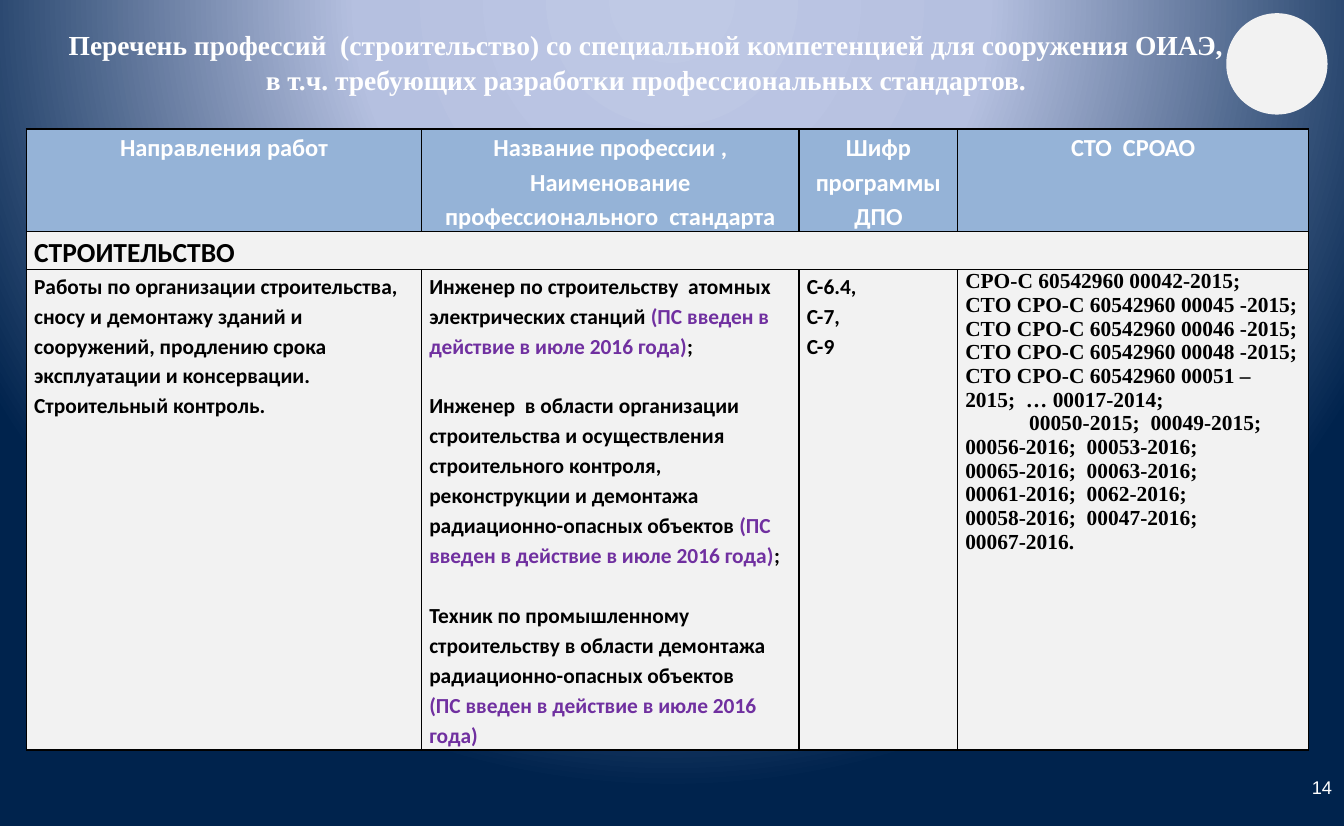
from pptx import Presentation
from pptx.dml.color import RGBColor
from pptx.enum.shapes import MSO_SHAPE
from pptx.enum.text import MSO_ANCHOR, PP_ALIGN
from pptx.oxml import parse_xml
from pptx.oxml.ns import nsdecls, qn
from pptx.util import Inches, Pt

WHITE = RGBColor(0xFF, 0xFF, 0xFF)
BLACK = RGBColor(0x00, 0x00, 0x00)
PURPLE = RGBColor(0x70, 0x30, 0xA0)
HEADER_BLUE = RGBColor(0x95, 0xB3, 0xD7)
LIGHT_GRAY = RGBColor(0xF2, 0xF2, 0xF2)
BACKGROUND_STOPS = [
    (0, RGBColor(0xBF, 0xC9, 0xE5)),
    (40, RGBColor(0xB5, 0xC0, 0xE0)),
    (100, RGBColor(0x00, 0x23, 0x4D)),
]

COLUMN_WIDTHS = [3.59, 3.43, 1.44, 3.19]
ROW_HEIGHTS = [0.93, 0.35, 4.36]
BLANK_LINE = 19.6
STANDARD_INDENT = 0.58

TITLE = ("Перечень профессий  (строительство) со специальной компетенцией для сооружения ОИАЭ,"
         "\vв т.ч. требующих разработки профессиональных стандартов.")
HEADERS = [
    ["Направления работ"],
    ["Название профессии ,", "Наименование профессионального  стандарта"],
    ["Шифр программы ДПО"],
    ["СТО  СРОАО"],
]
WORKS = [
    "Работы по организации строительства, сносу и демонтажу зданий и сооружений, "
    "продлению срока эксплуатации и консервации.",
    "Строительный контроль.",
]
IN_FORCE = "(ПС введен в действие в июле 2016 года)"
ENGINEERS = [
    "Инженер по строительству  атомных электрических станций ",
    "Инженер  в области организации строительства и осуществления строительного контроля, "
    "реконструкции и демонтажа  радиационно-опасных объектов ",
]
TECHNICIAN = ("Техник по промышленному строительству в области демонтажа "
              "радиационно-опасных объектов")
CODES = ["С-6.4,", "С-7,", "С-9"]
STANDARDS = [
    "СРО-С 60542960 00042-2015;",
    "СТО СРО-С 60542960 00045 -2015;",
    "СТО СРО-С 60542960 00046 -2015;",
    "СТО СРО-С 60542960 00048 -2015;",
    "СТО СРО-С 60542960 00051 – 2015;  … 00017-2014;",
]
INDENTED_STANDARDS = "00050-2015;  00049-2015;"
MORE_STANDARDS = [
    "00056-2016;  00053-2016;",
    "00065-2016;  00063-2016;",
    "00061-2016;  0062-2016;",
    "00058-2016;  00047-2016;",
    "00067-2016.",
]


def write(frame, text, size=14, color=BLACK, font="Calibri", bold=True,
          align=PP_ALIGN.LEFT, spacing=1.15, before=0, indent=0):
    """Add a paragraph; text is a string or a list of (text, color) pairs."""
    paragraph = frame.paragraphs[0]
    if paragraph.runs:
        paragraph = frame.add_paragraph()
    paragraph.alignment = align
    paragraph.line_spacing = spacing
    paragraph.space_before = Pt(before)
    if indent:
        paragraph._p.get_or_add_pPr().set("marL", str(Inches(indent)))
    pieces = [(text, color)] if isinstance(text, str) else text
    for piece, piece_color in pieces:
        for number, line in enumerate(piece.split("\v")):
            if number:
                paragraph.add_line_break()
            run = paragraph.add_run()
            run.text = line
            run.font.size = Pt(size)
            run.font.name = font
            run.font.bold = bold
            run.font.color.rgb = piece_color


def set_background(slide):
    slide.background.fill.solid()
    stops = "".join(f'<a:gs pos="{position * 1000}"><a:srgbClr val="{color}"/></a:gs>'
                    for position, color in BACKGROUND_STOPS)
    gradient = parse_xml(
        f'<a:gradFill {nsdecls("a")} rotWithShape="1"><a:gsLst>{stops}</a:gsLst>'
        '<a:path path="circle"><a:fillToRect l="50000" t="-80000" r="50000" b="180000"/>'
        '</a:path></a:gradFill>')
    properties = slide.element.find(".//" + qn("p:bgPr"))
    properties.replace(properties[0], gradient)


def add_emblem_disc(slide):
    disc = slide.shapes.add_shape(MSO_SHAPE.OVAL, Inches(11.14), Inches(0.12),
                                  Inches(0.92), Inches(0.92))
    disc.shadow.inherit = False
    disc.fill.solid()
    disc.fill.fore_color.rgb = LIGHT_GRAY
    disc.line.fill.background()


def format_title(slide):
    title = slide.shapes.title
    title.left, title.top = Inches(0.44), Inches(0.16)
    title.width, title.height = Inches(10.86), Inches(0.78)
    frame = title.text_frame
    frame.word_wrap = True
    frame.vertical_anchor = MSO_ANCHOR.MIDDLE
    write(frame, TITLE, size=18, color=WHITE, font="Times New Roman",
          align=PP_ALIGN.CENTER, spacing=1.08)


def add_page_number(slide):
    box = slide.shapes.add_textbox(Inches(11.81), Inches(6.95), Inches(0.4), Inches(0.4))
    frame = box.text_frame
    frame.word_wrap = True
    frame.margin_left = frame.margin_right = 0
    frame.vertical_anchor = MSO_ANCHOR.MIDDLE
    write(frame, "14", size=12, color=WHITE, font="Arial", bold=False,
          align=PP_ALIGN.CENTER, spacing=1)


def format_cell(cell, fill):
    cell.margin_left = cell.margin_right = Inches(0.07)
    cell.margin_top = cell.margin_bottom = 0
    properties = cell._tc.get_or_add_tcPr()
    for side in ("lnL", "lnR", "lnT", "lnB"):
        properties.append(parse_xml(
            f'<a:{side} {nsdecls("a")} w="{Pt(1)}"><a:solidFill>'
            f'<a:srgbClr val="{BLACK}"/></a:solidFill></a:{side}>'))
    cell.fill.solid()
    cell.fill.fore_color.rgb = fill


def add_professions_table(slide):
    frame = slide.shapes.add_table(
        len(ROW_HEIGHTS), len(COLUMN_WIDTHS), Inches(0.24), Inches(1.17),
        Inches(sum(COLUMN_WIDTHS)), Inches(sum(ROW_HEIGHTS)))
    table = frame.table
    for column, width in zip(table.columns, COLUMN_WIDTHS):
        column.width = Inches(width)
    for number, (row, height) in enumerate(zip(table.rows, ROW_HEIGHTS)):
        row.height = Inches(height)
        for cell in row.cells:
            format_cell(cell, LIGHT_GRAY if number else HEADER_BLUE)
    table.cell(1, 0).merge(table.cell(1, len(COLUMN_WIDTHS) - 1))

    for cell, lines in zip(table.rows[0].cells, HEADERS):
        for line in lines:
            write(cell.text_frame, line, size=16, color=WHITE, align=PP_ALIGN.CENTER)
    write(table.cell(1, 0).text_frame, "СТРОИТЕЛЬСТВО", size=18)

    works, professions, codes, standards = [cell.text_frame for cell in table.rows[2].cells]
    for line in WORKS:
        write(works, line)
    for number, name in enumerate(ENGINEERS):
        write(professions, [(name, BLACK), (IN_FORCE, PURPLE), (";", BLACK)],
              before=BLANK_LINE if number else 0)
    write(professions, TECHNICIAN, before=BLANK_LINE)
    write(professions, IN_FORCE, color=PURPLE)
    for line in CODES:
        write(codes, line)
    for line in [*STANDARDS, INDENTED_STANDARDS, *MORE_STANDARDS]:
        write(standards, line, font="Times New Roman", spacing=1,
              indent=STANDARD_INDENT if line == INDENTED_STANDARDS else 0)


def main():
    presentation = Presentation()
    presentation.slide_width = Inches(12.21)
    presentation.slide_height = Inches(7.5)
    slide = presentation.slides.add_slide(presentation.slide_layouts[5])
    set_background(slide)
    add_emblem_disc(slide)
    format_title(slide)
    add_page_number(slide)
    add_professions_table(slide)
    presentation.save("out.pptx")


if __name__ == "__main__":
    main()
